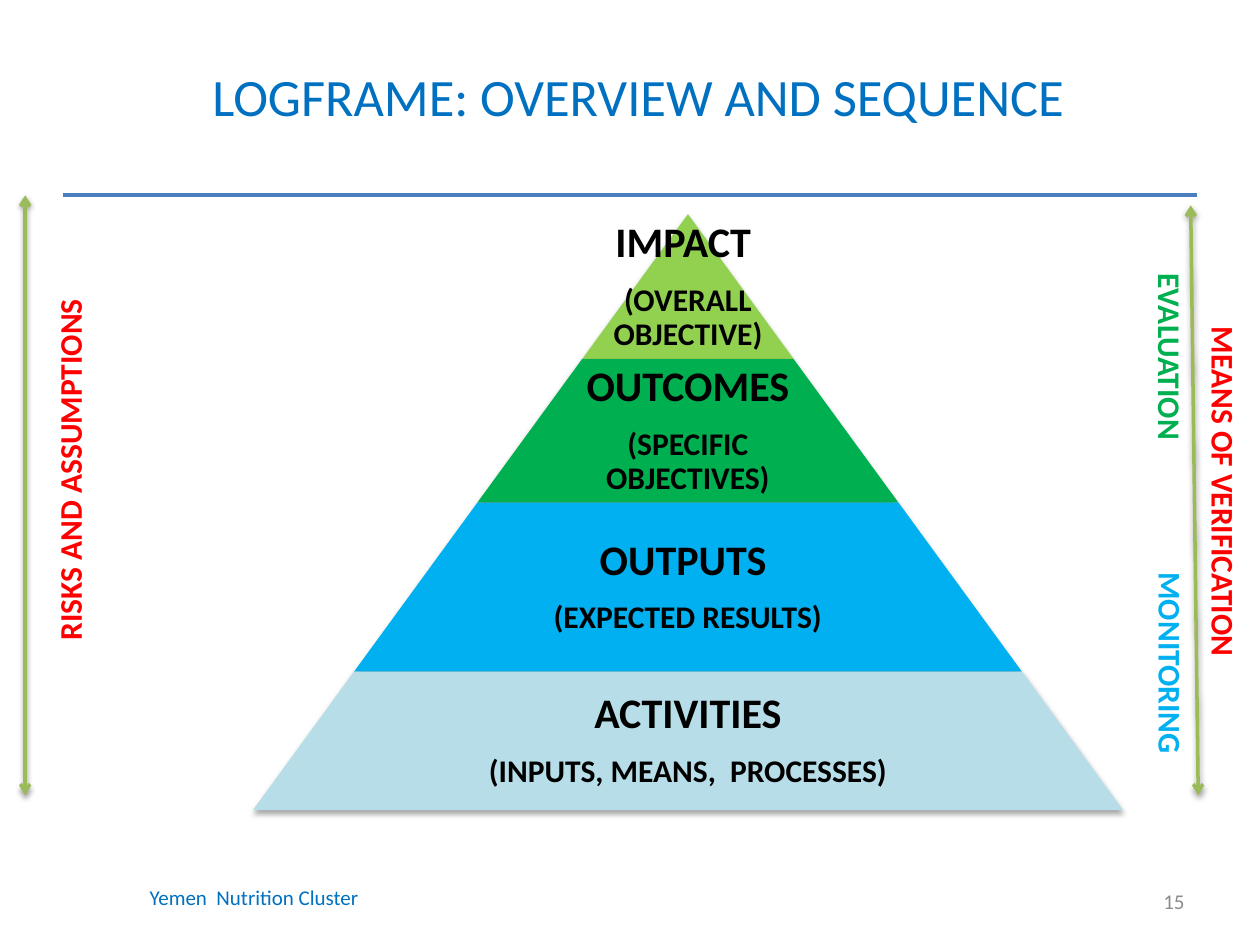
"""Build the logframe overview slide: a four-level pyramid between two vertical arrows."""
from lxml import etree
from pptx import Presentation
from pptx.dml.color import RGBColor
from pptx.enum.shapes import MSO_CONNECTOR, MSO_SHAPE
from pptx.enum.text import MSO_ANCHOR, PP_ALIGN
from pptx.oxml.ns import qn
from pptx.util import Inches, Pt

TRAPEZOID, STRAIGHT = MSO_SHAPE.TRAPEZOID, MSO_CONNECTOR.STRAIGHT
MIDDLE, TOP = MSO_ANCHOR.MIDDLE, MSO_ANCHOR.TOP
LEFT, CENTER, RIGHT = PP_ALIGN.LEFT, PP_ALIGN.CENTER, PP_ALIGN.RIGHT

FONT = "Calibri"
COLORS = {
    "blue": "0070C0", "rule": "4B7EBC", "gray": "8C8C8C", "black": "000000",
    "lime": "92D050", "green": "00B050", "sky": "00B0F0", "pale": "B7DEE8",
    "olive": "9BBB59", "red": "FF0000",
}
TITLE = "LOGFRAME: OVERVIEW AND SEQUENCE "
# heading, explanation, colour, bottom edge, share of the width used by the text
LEVELS = [
    ("IMPACT ", "(OVERALL OBJECTIVE)", "lime", 2.85, 1),
    ("OUTCOMES", "(SPECIFIC OBJECTIVES)", "green", 3.99, 0.65),
    ("OUTPUTS ", "(EXPECTED RESULTS)", "sky", 5.33, 0.65),
    ("ACTIVITIES", "(INPUTS, MEANS,  PROCESSES)", "pale", 6.43, 0.65),
]
APEX_X, APEX_Y, SLOPE = 5.46, 1.7, 0.73
# text, colour, box, rotation
SIDE_LABELS = [
    ("MONITORING ", "sky", (7.71, 5.09, 3.17, 0.4), 90),
    ("EVALUATION ", "green", (7.9, 2.66, 2.78, 0.4), 90),
    ("RISKS AND ASSUMPTIONS ", "red", (-1.89, 3.5, 4.88, 0.4), 270),
    ("MEANS OF VERIFICATION ", "red", (8.13, 3.73, 3.17, 0.4), 90),
]
# text, colour, box, alignment
FOOTERS = [
    ("Yemen  Nutrition Cluster", "blue", (1.09, 6.92, 4.5, 0.4), LEFT),
    ("15", "gray", (7.17, 6.95, 2.33, 0.4), RIGHT),
]
ARROWS = [(9.45, 1.63, 9.51, 6.31), (0.2, 1.55, 0.2, 6.31)]


def rgb(name):
    return RGBColor.from_string(COLORS[name])


def write(paragraph, text, size, color, align, bold=False):
    paragraph.alignment = align
    run = paragraph.add_run()
    run.text = text
    run.font.name, run.font.size, run.font.bold = FONT, Pt(size), bold
    run.font.color.rgb = rgb(color)


def add_box(slide, box, anchor, inset=None):
    label = slide.shapes.add_textbox(*map(Inches, box))
    frame = label.text_frame
    frame.word_wrap, frame.vertical_anchor = True, anchor
    if inset is not None:
        frame.margin_left = frame.margin_right = Inches(inset)
        frame.margin_top = frame.margin_bottom = Inches(inset)
    return label


def set_shadow(part, opacity=0, blur=0, distance=0):
    properties = part._element.spPr
    effects = etree.SubElement(properties, qn("a:effectLst"))
    if opacity:
        shadow = etree.SubElement(
            effects, qn("a:outerShdw"), blurRad=str(Pt(blur)), dist=str(Pt(distance)),
            dir="5400000", rotWithShape="0")
        tint = etree.SubElement(shadow, qn("a:srgbClr"), val=COLORS["black"])
        etree.SubElement(tint, qn("a:alpha"), val=str(opacity * 1000))


def add_line(slide, ends, color, width):
    line = slide.shapes.add_connector(STRAIGHT, *map(Inches, ends))
    line.line.color.rgb, line.line.width = rgb(color), Pt(width)
    return line


def add_arrow(slide, ends):
    arrow = add_line(slide, ends, "olive", 2)
    outline = arrow.line._get_or_add_ln()
    for end in ("a:headEnd", "a:tailEnd"):
        etree.SubElement(outline, qn(end), type="arrow")
    set_shadow(arrow, 38, 3.1, 1.6)


def add_pyramid(slide):
    top = APEX_Y
    for heading, explanation, color, bottom, text_share in LEVELS:
        height, width = bottom - top, 2 * SLOPE * (bottom - APEX_Y)
        level = slide.shapes.add_shape(
            TRAPEZOID, *map(Inches, (APEX_X - width / 2, top, width, height)))
        level.adjustments[0] = SLOPE
        level.fill.solid()
        level.fill.fore_color.rgb = rgb(color)
        level.line.fill.background()
        set_shadow(level, 35, 3.1, 1.8)

        text_width = width * text_share
        box = (APEX_X - text_width / 2, top, text_width, height)
        frame = add_box(slide, box, MIDDLE, 0.03).text_frame
        first, second = frame.paragraphs[0], frame.add_paragraph()
        write(first, heading, 24, "black", CENTER, True)
        write(second, explanation, 18, "black", CENTER, True)
        first.line_spacing = second.line_spacing = 0.9
        first.space_after = Pt(10)
        top = bottom


def main():
    deck = Presentation()
    deck.slide_width, deck.slide_height = Inches(10), Inches(7.5)
    slide = deck.slides.add_slide(deck.slide_layouts[5])

    title = slide.shapes.title
    title.left, title.top, title.width, title.height = map(Inches, (0.35, 0.33, 9.53, 0.85))
    title.text_frame.vertical_anchor = MIDDLE
    write(title.text_frame.paragraphs[0], TITLE, 30, "blue", CENTER)

    set_shadow(add_line(slide, (0.5, 1.55, 9.5, 1.55), "rule", 2.25))
    for text, color, box, align in FOOTERS:
        footer = add_box(slide, box, MIDDLE)
        write(footer.text_frame.paragraphs[0], text, 12, color, align)

    add_pyramid(slide)
    for ends in ARROWS:
        add_arrow(slide, ends)
    for text, color, box, rotation in SIDE_LABELS:
        label = add_box(slide, box, TOP)
        label.rotation = rotation
        write(label.text_frame.paragraphs[0], text, 18, color, CENTER, True)

    deck.save("out.pptx")


if __name__ == "__main__":
    main()
